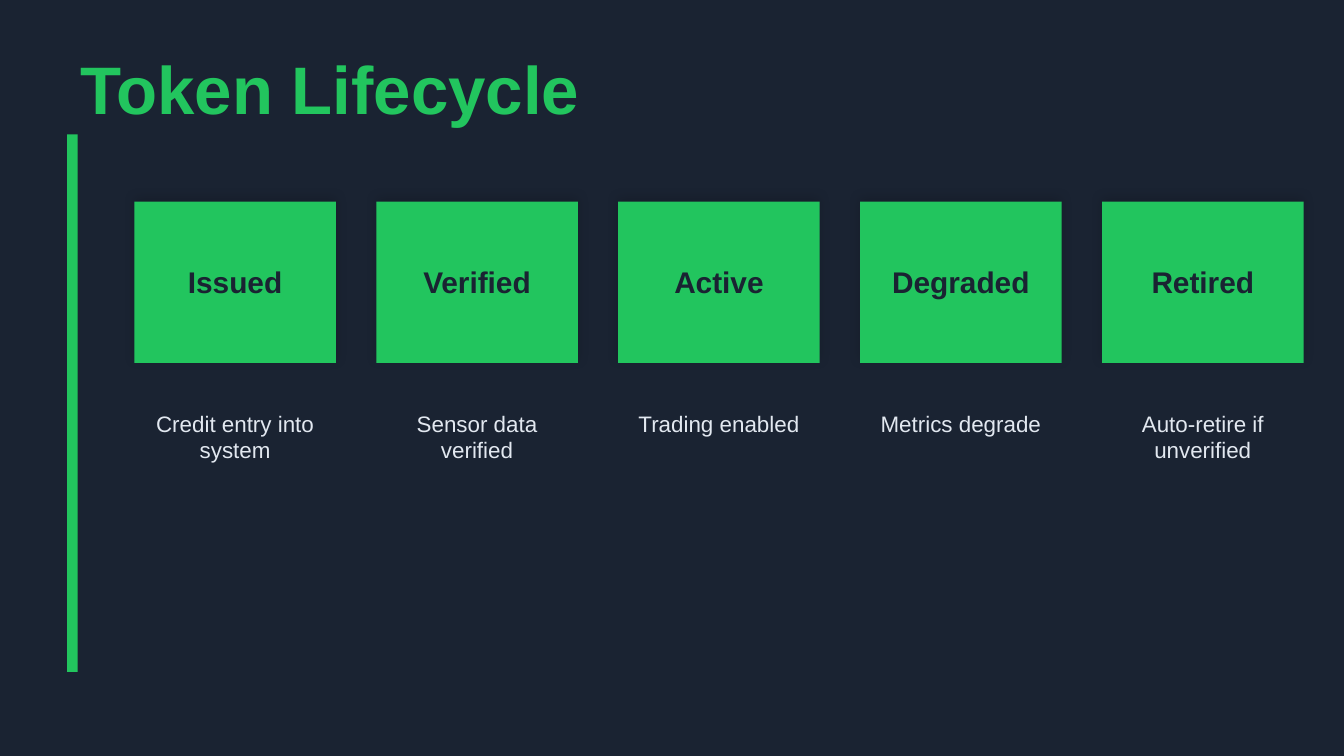
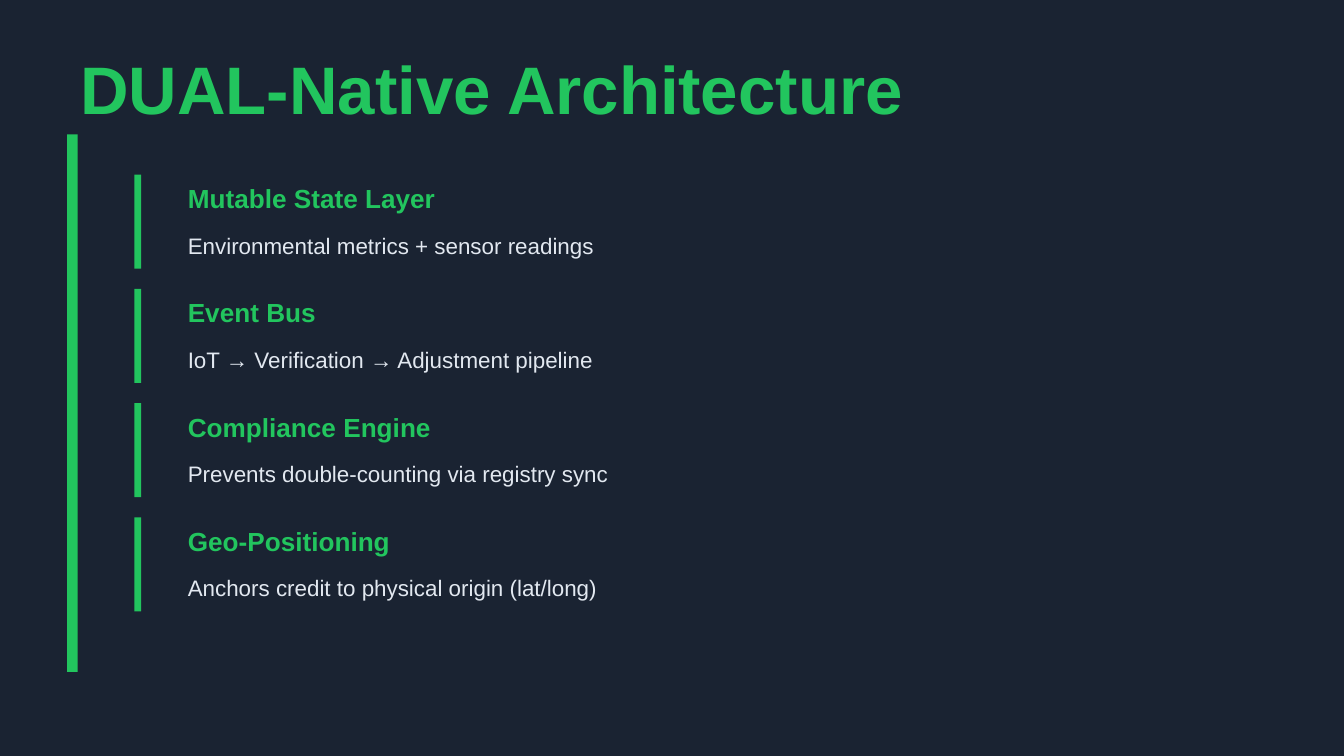
import lxml.etree
import pptx
import pptx.dml.color
import pptx.enum.shapes
import pptx.enum.text
import pptx.oxml.ns
import pptx.util

Cm = pptx.util.Cm
Pt = pptx.util.Pt
ALIGN = pptx.enum.text.PP_ALIGN
ANCHOR = pptx.enum.text.MSO_ANCHOR

COLOURS = {"background": "1A2332", "accent": "22C55E", "body": "E2E8F0", "shadow": "000000"}

STYLES = {
    "title": ("accent", {"size": Pt(36), "bold": True}),
    "stage": ("background", {"size": Pt(16), "bold": True}),
    "heading": ("accent", {"size": Pt(14), "bold": True}),
    "body": ("body", {"size": Pt(12), "bold": False}),
}

STAGES = [
    ("Issued", "Credit entry into system"),
    ("Verified", "Sensor data verified"),
    ("Active", "Trading enabled"),
    ("Degraded", "Metrics degrade"),
    ("Retired", "Auto-retire if unverified"),
]

LAYERS = [
    ("Mutable State Layer", "Environmental metrics + sensor readings"),
    ("Event Bus", "IoT → Verification → Adjustment pipeline"),
    ("Compliance Engine", "Prevents double-counting via registry sync"),
    ("Geo-Positioning", "Anchors credit to physical origin (lat/long)"),
]


def colour(name):
    return pptx.dml.color.RGBColor.from_string(COLOURS[name])


class Deck:
    """Holds the shared style and the slide being filled; lengths are in cm."""

    font_name = "Arial"

    def __init__(self):
        self.presentation = pptx.Presentation()
        self.presentation.slide_width = Cm(25.4)
        self.presentation.slide_height = Cm(14.29)
        self.slide = None

    def add_slide(self, title):
        self.slide = self.presentation.slides.add_slide(self.presentation.slide_layouts[6])
        fill = self.slide.background.fill
        fill.solid()
        fill.fore_color.rgb = colour("background")
        self.text(title, "title", 1.27, 1.02, 22.86, 1.27)
        self.block(1.27, 2.54, 0.2, 10.16)

    def text(self, content, style, left, top, width, height,
             alignment=ALIGN.LEFT, anchor=ANCHOR.MIDDLE):
        shape = self.slide.shapes.add_textbox(Cm(left), Cm(top), Cm(width), Cm(height))
        frame = shape.text_frame
        frame.word_wrap = True
        frame.vertical_anchor = anchor
        paragraph = frame.paragraphs[0]
        paragraph.alignment = alignment
        run = paragraph.add_run()
        run.text = content
        colour_name, font_values = STYLES[style]
        for attribute, value in {"name": self.font_name, **font_values}.items():
            setattr(run.font, attribute, value)
        run.font.color.rgb = colour(colour_name)

    def block(self, left, top, width, height):
        shape = self.slide.shapes.add_shape(
            pptx.enum.shapes.MSO_SHAPE.RECTANGLE, Cm(left), Cm(top), Cm(width), Cm(height))
        shape.shadow.inherit = False
        shape.fill.solid()
        shape.fill.fore_color.rgb = colour("accent")
        shape.line.fill.background()
        return shape

    def raised_block(self, left, top, width, height):
        """Adds a block with a soft shadow cast upwards."""
        shape = self.block(left, top, width, height)
        qn = pptx.oxml.ns.qn
        effects = shape.element.spPr.find(qn("a:effectLst"))
        shadow = lxml.etree.SubElement(
            effects, qn("a:outerShdw"), blurRad=str(Pt(6)), dist=str(Pt(2)),
            dir=str(270 * 60000), algn="bl", rotWithShape="0")
        tint = lxml.etree.SubElement(shadow, qn("a:srgbClr"), val=COLOURS["shadow"])
        lxml.etree.SubElement(tint, qn("a:alpha"), val="15000")


def build_lifecycle(deck):
    deck.add_slide("Token Lifecycle")
    width, gap = 3.81, 0.762
    for index, (stage, caption) in enumerate(STAGES):
        left = 2.54 + index * (width + gap)
        deck.raised_block(left, 3.81, width, 3.05)
        deck.text(stage, "stage", left, 4.57, width, 1.52, ALIGN.CENTER)
        deck.text(caption, "body", left, 7.62, width, 3.05, ALIGN.CENTER, ANCHOR.TOP)


def build_architecture(deck):
    deck.add_slide("DUAL-Native Architecture")
    line_height, gap = 0.89, 0.38
    for index, (heading, detail) in enumerate(LAYERS):
        top = 3.3 + index * (2 * line_height + gap)
        deck.block(2.54, top, 0.13, 2 * line_height)
        deck.text(heading, "heading", 3.3, top, 6.35, line_height)
        deck.text(detail, "body", 3.3, top + line_height, 15.24, line_height)


def main():
    deck = Deck()
    build_lifecycle(deck)
    build_architecture(deck)
    deck.presentation.save("out.pptx")


if __name__ == "__main__":
    main()
